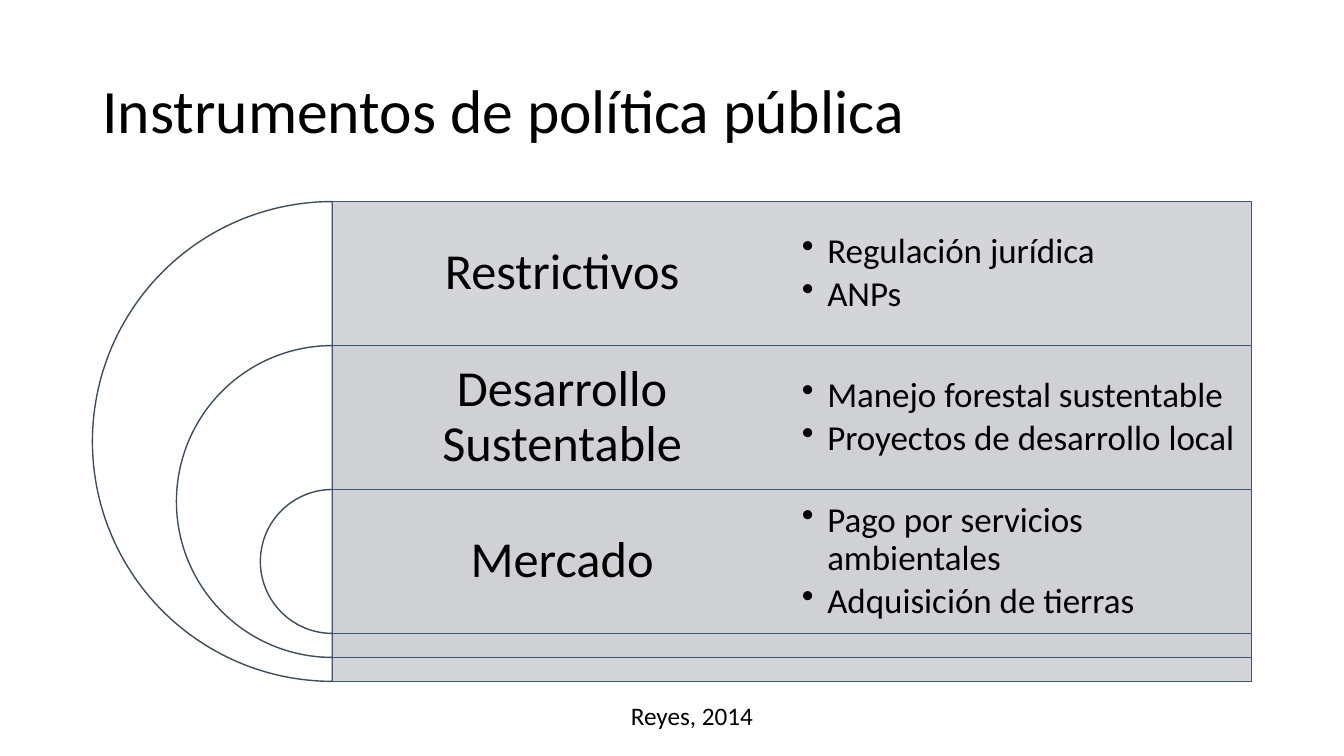
from lxml.etree import SubElement
from pptx import Presentation
from pptx.dml.color import RGBColor
from pptx.enum.shapes import MSO_SHAPE as Preset
from pptx.enum.text import MSO_ANCHOR as Anchor, MSO_AUTO_SIZE as AutoSize, PP_ALIGN as Align
from pptx.oxml.ns import qn
from pptx.util import Cm, Pt

BLACK, WHITE, GREY = "000000", "FFFFFF", "CFD1D4"
ARC_LINE, BAND_LINE = "3E4C60", "44546A"
INSTRUMENTS = [
    ("Restrictivos", ["Regulación jurídica", "ANPs"]),
    ("Desarrollo Sustentable", ["Manejo forestal sustentable", "Proyectos de desarrollo local"]),
    ("Mercado", ["Pago por servicios ambientales", "Adquisición de tierras"]),
]


def paint(color_format, color):
    """Set a colour from its hex string."""
    color_format.rgb = RGBColor.from_string(color)


def add_words(paragraph, words, size):
    """Add one formatted run to a paragraph."""
    run = paragraph.add_run()
    run.text = words
    run.font.name = "Calibri"
    run.font.size = Pt(size)
    paint(run.font.color, BLACK)


def add_bullet(paragraph):
    """Give a paragraph a round bullet with a hanging indent."""
    properties = paragraph._p.get_or_add_pPr()
    properties.set("marL", str(Cm(0.64)))
    properties.set("indent", str(Cm(-0.64)))
    SubElement(properties, qn("a:buChar"), char="•")


def add_region(slide, preset, box, fill, line):
    """Draw a filled, outlined preset shape in a box."""
    region = slide.shapes.add_shape(preset, *map(Cm, box))
    region.shadow.inherit = False
    region.fill.solid()
    paint(region.fill.fore_color, fill)
    paint(region.line.color, line)
    region.line.width = Pt(1)
    return region


def add_text_frame(slide, box, inset):
    """Add a wrapping, vertically centred text box and return its frame."""
    frame = slide.shapes.add_textbox(*map(Cm, box)).text_frame
    frame.word_wrap = True
    frame.vertical_anchor = Anchor.MIDDLE
    frame.margin_left = frame.margin_right = Cm(inset)
    frame.margin_top = frame.margin_bottom = Cm(inset)
    return frame


def add_title(slide, words, box):
    """Place the slide title."""
    title = slide.shapes.title
    title.left, title.top, title.width, title.height = map(Cm, box)
    frame = title.text_frame
    frame.auto_size = AutoSize.NONE
    frame.vertical_anchor = Anchor.MIDDLE
    heading = frame.paragraphs[0]
    heading.alignment = Align.LEFT
    heading.line_spacing = 0.9
    add_words(heading, words, 44)


def add_category(slide, name, examples, box):
    """Write a category name in the left half and its examples in the right."""
    left, top, width, height = box
    half = width / 2
    label = add_text_frame(slide, (left, top, half, height), 0.38).paragraphs[0]
    label.alignment = Align.CENTER
    label.line_spacing = 0.9
    add_words(label, name, 36)
    examples_frame = add_text_frame(slide, (left + half, top, half, height), 0.25)
    for index, example in enumerate(examples):
        item = examples_frame.add_paragraph() if index else examples_frame.paragraphs[0]
        add_bullet(item)
        item.line_spacing = 0.9
        item.space_after = Pt(3.75)
        add_words(item, example, 25)


def add_nested_bands(slide, instruments, box):
    """Draw nested half discs, each with its band, one row apart."""
    left, top, width, height = box
    axis = left + height / 2
    row_height = height * 0.3
    shrink = (height - row_height) / (len(instruments) - 1)
    band_width = left + width - axis
    for row, (name, examples) in enumerate(instruments):
        diameter = height - row * shrink
        row_top = top + row * row_height
        half_disc = add_region(slide, Preset.PIE, (axis - diameter / 2, row_top, diameter, diameter),
                               WHITE, ARC_LINE)
        half_disc.adjustments[0] = 54
        half_disc.adjustments[1] = 162
        band = add_region(slide, Preset.RECTANGLE, (axis, row_top, band_width, diameter),
                          GREY, BAND_LINE)
        band_color = band.fill._xPr.find(qn("a:solidFill"))[0]
        SubElement(band_color, qn("a:alpha"), val="90000")
        add_category(slide, name, examples, (axis, row_top, band_width, row_height))


def add_citation(slide, words, box):
    """Write the citation below the diagram."""
    frame = add_text_frame(slide, box, 0.25)
    frame.vertical_anchor = Anchor.TOP
    frame.margin_top = frame.margin_bottom = Cm(0.13)
    add_words(frame.paragraphs[0], words, 18)


def main():
    """Build and save the slide."""
    deck = Presentation()
    deck.slide_width, deck.slide_height = Cm(33.87), Cm(19.05)
    slide = deck.slides.add_slide(deck.slide_layouts[5])
    add_title(slide, "Instrumentos de política pública", (2.33, 1.01, 29.21, 3.68))
    add_nested_bands(slide, INSTRUMENTS, (2.33, 5.08, 29.21, 12.09))
    add_citation(slide, "Reyes, 2014", (15.65, 17.53, 8.46, 1.03))
    deck.save("out.pptx")


if __name__ == "__main__":
    main()
